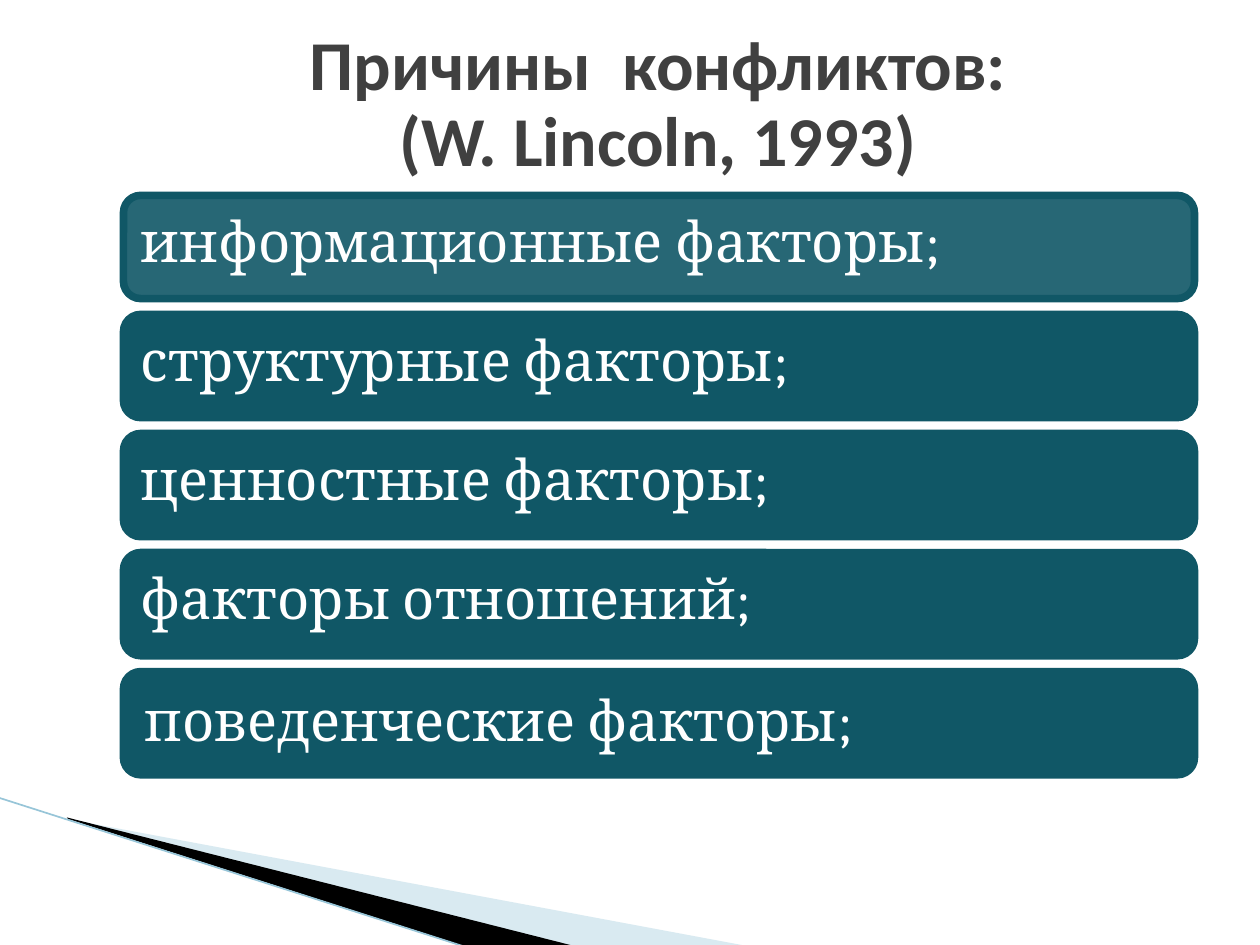
"""Build the slide on the causes of conflicts."""
import lxml.etree
import pptx
import pptx.dml.color
import pptx.enum.shapes
import pptx.enum.text
import pptx.oxml.ns
import pptx.util

Cm = pptx.util.Cm
SHAPE = pptx.enum.shapes.MSO_SHAPE
ANCHOR = pptx.enum.text.MSO_ANCHOR
ALIGN = pptx.enum.text.PP_ALIGN
COLORS = {
    "bar": "105766",
    "bar_text": "FFFFFF",
    "title": "404040",
    "pale": "A0CBDC",
    "dark": "000000",
    "edge": "97C5D8",
}


def rgb(name):
    """Return the named colour."""
    return pptx.dml.color.RGBColor.from_string(COLORS[name])


def write(box, text, font, size, color, bold=False, align=ALIGN.LEFT,
          anchor=ANCHOR.TOP, inset=None, spacing=None):
    """Write text with line breaks into the box."""
    frame = box.text_frame
    frame.word_wrap = True
    frame.vertical_anchor = anchor
    if inset is not None:
        frame.margin_left = frame.margin_right = Cm(inset)
        frame.margin_top = frame.margin_bottom = Cm(inset)
    para = frame.paragraphs[0]
    para.alignment = align
    para.line_spacing = spacing
    for index, line in enumerate(text.splitlines()):
        if index:
            para.add_line_break()
        span = para.add_run()
        span.text = line
        span.font.name = font
        span.font.size = pptx.util.Pt(size)
        span.font.bold = bold
        span.font.color.rgb = rgb(color)


class Painter:
    """Hold the style and the current page."""

    bar_font = {"font": "Cambria", "size": 32, "color": "bar_text"}
    title_font = {"font": "Calibri", "size": 40, "color": "title", "bold": True}

    def __init__(self, page):
        """Start on the given page."""
        self.page = page

    def fill(self, shape, color, opacity=100):
        """Fill the shape evenly, without shadow or line."""
        shape.shadow.inherit = False
        shape.fill.solid()
        shape.fill.fore_color.rgb = rgb(color)
        shape.line.fill.background()
        if opacity < 100:
            tint = shape.fill._xPr.find(".//" + pptx.oxml.ns.qn("a:srgbClr"))
            alpha = lxml.etree.SubElement(tint, pptx.oxml.ns.qn("a:alpha"))
            alpha.set("val", str(opacity * 1000))

    def wedge(self, points, color, opacity=100):
        """Draw a closed outline through the points."""
        corners = [(Cm(x), Cm(y)) for x, y in points]
        builder = self.page.shapes.build_freeform(*corners[0])
        builder.add_line_segments(corners[1:], close=True)
        self.fill(builder.convert_to_shape(), color, opacity)

    def line(self, start, end, color, width):
        """Draw a straight line."""
        line = self.page.shapes.add_connector(
            pptx.enum.shapes.MSO_CONNECTOR.STRAIGHT,
            *(Cm(value) for value in start + end))
        line.line.color.rgb = rgb(color)
        line.line.width = pptx.util.Pt(width)
        lxml.etree.SubElement(line._element.spPr, pptx.oxml.ns.qn("a:effectLst"))

    def title(self, text, place):
        """Add the centred title."""
        box = self.page.shapes.add_textbox(*(Cm(value) for value in place))
        write(box, text, align=ALIGN.CENTER, anchor=ANCHOR.MIDDLE, inset=0.43,
              spacing=0.9, **self.title_font)

    def bar(self, shapes, place, opacity=100):
        """Add a rounded bar and return it."""
        bar = shapes.add_shape(SHAPE.ROUNDED_RECTANGLE,
                               *(Cm(value) for value in place))
        self.fill(bar, "bar", opacity)
        bar.line.color.rgb = rgb("bar")
        bar.line.width = pptx.util.Pt(4.33)
        return bar

    def factor(self, text, place, opacity=100):
        """Add a bar that holds its own text."""
        write(self.bar(self.page.shapes, place, opacity), text, **self.bar_font)

    def grouped_factor(self, text, place):
        """Add a bar grouped with a label laid over it."""
        left, top, width, height = place
        group = self.page.shapes.add_group_shape()
        self.bar(group.shapes, place)
        label = group.shapes.add_shape(
            SHAPE.RECTANGLE, Cm(left + 0.1), Cm(top + 0.1),
            Cm(width - 1.93), Cm(height - 0.2))
        self.fill(label, "bar")
        write(label, text, anchor=ANCHOR.MIDDLE, inset=0.33, spacing=0.9,
              **self.bar_font)


def main():
    """Build and save the deck."""
    deck = pptx.Presentation()
    deck.slide_width, deck.slide_height = Cm(25.4), Cm(19.05)
    painter = Painter(deck.slides.add_slide(deck.slide_layouts[6]))

    painter.wedge([(1.4, 16.52), (15.11, 19.08), (11.58, 19.08), (1.4, 16.51)],
                  "pale", 40)
    painter.wedge([(1.35, 16.48), (11.61, 19.08), (9.45, 19.1), (1.37, 16.51)],
                  "dark")
    painter.line((-0.03, 16.08), (9.42, 19.1), "edge", 0.95)
    painter.title("Причины  конфликтов:\n(W. Lincoln, 1993)",
                  (2.9, 0.33, 20.73, 3.61))

    factors = ["информационные факторы;", "структурные факторы;",
               "ценностные факторы;", "факторы отношений;",
               "поведенческие факторы;"]
    places = [(2.49, 3.94 + 2.4 * row, 21.59, 2.08)
              for row in range(len(factors))]
    painter.factor(factors[0], places[0], opacity=90)
    for text, place in zip(factors[1:-1], places[1:-1]):
        painter.factor(text, place)
    painter.grouped_factor(factors[-1], places[-1])
    deck.save("out.pptx")


if __name__ == "__main__":
    main()
